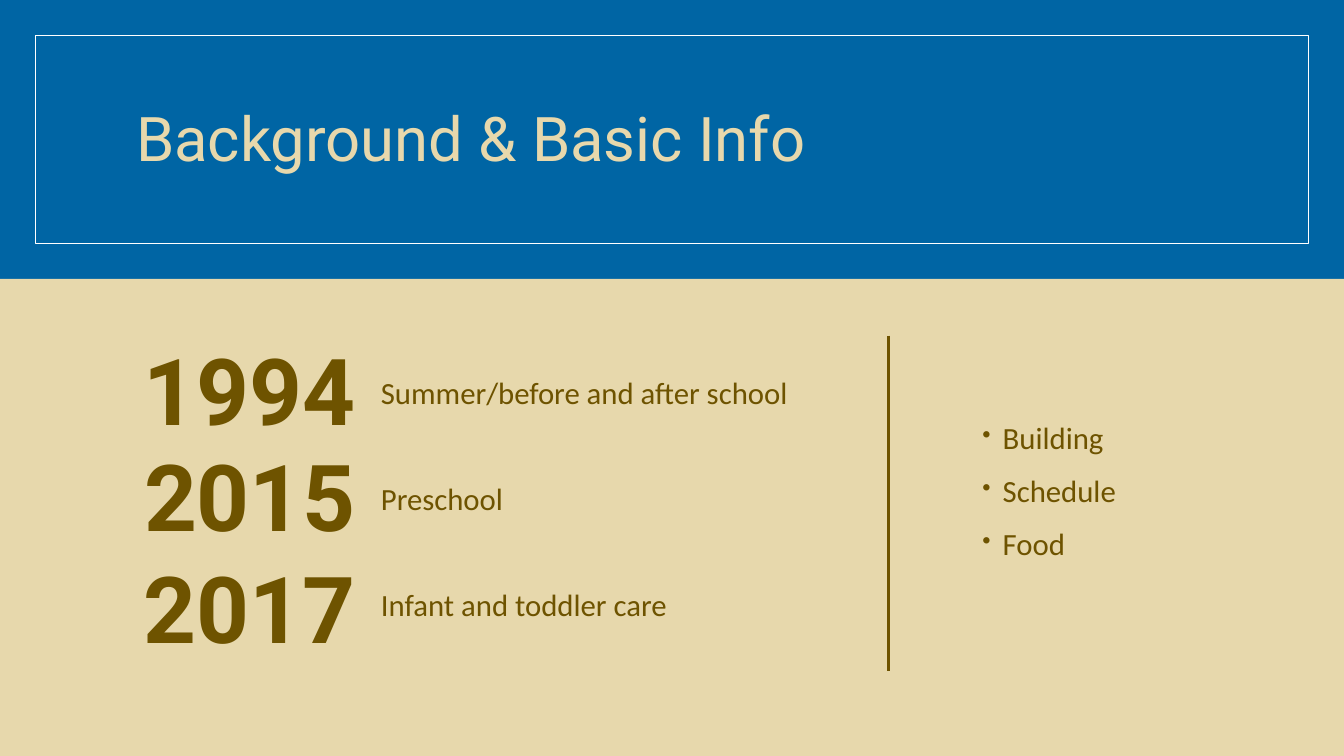
from dataclasses import dataclass

from lxml import etree
from pptx import Presentation
from pptx.dml.color import RGBColor
from pptx.enum.shapes import MSO_CONNECTOR, MSO_SHAPE
from pptx.enum.text import MSO_ANCHOR
from pptx.oxml.ns import qn
from pptx.util import Cm, Pt

RECT = MSO_SHAPE.RECTANGLE
STRAIGHT = MSO_CONNECTOR.STRAIGHT
TOP = MSO_ANCHOR.TOP
MIDDLE = MSO_ANCHOR.MIDDLE

TITLE = "Background & Basic Info"
# year, its left and its top in cm, what began
EVENTS = [
    ("1994", 3.23, 8.59, "Summer/before and after school"),
    ("2015", 3.25, 11.25, "Preschool"),
    ("2017", 3.23, 14.07, "Infant and toddler care"),
]
TOPICS = ["Building", "Schedule", "Food"]


@dataclass(frozen=True)
class Theme:
    blue: RGBColor = RGBColor(0x00, 0x65, 0xA4)
    sand: RGBColor = RGBColor(0xE7, 0xD8, 0xAC)
    brown: RGBColor = RGBColor(0x6E, 0x53, 0x00)
    white: RGBColor = RGBColor(0xFF, 0xFF, 0xFF)
    head: str = "Roboto"
    body: str = "Calibri"
    title: int = 44
    year: int = 66
    text: int = 22


THEME = Theme()
WIDTH, HEIGHT = 33.87, 19.05
SPLIT = 7.03                    # where the sand panel starts
EDGE = 0.89                     # inset of the title frame
NOTE_LEFT, NOTE_TOP, NOTE_STEP = 9.22, 9.4, 2.67
RULE_X, RULE_TOP, RULE_END = 22.4, 8.46, 16.92


def add_rect(slide, left, top, width, height, fill=None, line=None):
    rect = slide.shapes.add_shape(RECT, Cm(left), Cm(top), Cm(width), Cm(height))
    rect.shadow.inherit = False
    if fill is None:
        rect.fill.background()
    else:
        rect.fill.solid()
        rect.fill.fore_color.rgb = fill
    if line is None:
        rect.line.fill.background()
    else:
        rect.line.color.rgb = line
        rect.line.width = Pt(1)


def add_text(slide, box, lines, font, size, color, bold=False, anchor=TOP,
             before=14, margin=0.13, hang=0):
    """Add one paragraph per line; margin and hang are indents in cm."""
    frame = slide.shapes.add_textbox(*(Cm(side) for side in box)).text_frame
    frame.word_wrap = True
    frame.vertical_anchor = anchor
    frame.text = "\n".join(lines)
    for para in frame.paragraphs:
        para.line_spacing = 0.9
        para.space_before = Pt(before)
        props = para._p.get_or_add_pPr()
        props.set("marL", str(Cm(margin)))
        props.set("indent", str(Cm(-hang)))
        if hang:
            add_bullet(props, color)
        for run in para.runs:
            run.font.name = font
            run.font.size = Pt(size)
            run.font.bold = bold
            run.font.color.rgb = color


def add_bullet(props, color):
    tint = etree.SubElement(props, qn("a:buClr"))
    etree.SubElement(tint, qn("a:srgbClr"), val=str(color))
    etree.SubElement(props, qn("a:buSzPct"), val="80000")
    etree.SubElement(props, qn("a:buChar"), char="•")


def add_rule(slide):
    rule = slide.shapes.add_connector(
        STRAIGHT, Cm(RULE_X), Cm(RULE_TOP), Cm(RULE_X), Cm(RULE_END))
    rule.line.color.rgb = THEME.brown
    rule.line.width = Pt(2.25)
    etree.SubElement(rule._element.spPr, qn("a:effectLst"))


def main():
    deck = Presentation()
    deck.slide_width, deck.slide_height = Cm(WIDTH), Cm(HEIGHT)
    slide = deck.slides.add_slide(deck.slide_layouts[6])
    slide.background.fill.solid()
    slide.background.fill.fore_color.rgb = THEME.sand

    add_rect(slide, 0, 0, WIDTH, HEIGHT, fill=THEME.blue)
    add_rect(slide, EDGE, EDGE, WIDTH - 2 * EDGE, SPLIT - 2 * EDGE,
             line=THEME.white)
    add_text(slide, (3.18, 1.7, 27.43, 3.76), [TITLE], THEME.head, THEME.title,
             THEME.sand, anchor=MIDDLE, before=0, margin=0)
    add_rect(slide, 0, SPLIT, WIDTH, HEIGHT - SPLIT, fill=THEME.sand)

    for row, (year, left, top, note) in enumerate(EVENTS):
        add_text(slide, (left, top, 6.88, 4.09), [year], THEME.head,
                 THEME.year, THEME.brown, bold=True)
        add_text(slide, (NOTE_LEFT, NOTE_TOP + row * NOTE_STEP, 10.95, 1.4),
                 [note], THEME.body, THEME.text, THEME.brown)

    add_text(slide, (24.38, 10.54, 6.25, 4.09), TOPICS, THEME.body, THEME.text,
             THEME.brown, margin=0.64, hang=0.51)
    add_rule(slide)
    deck.save("out.pptx")


if __name__ == "__main__":
    main()
